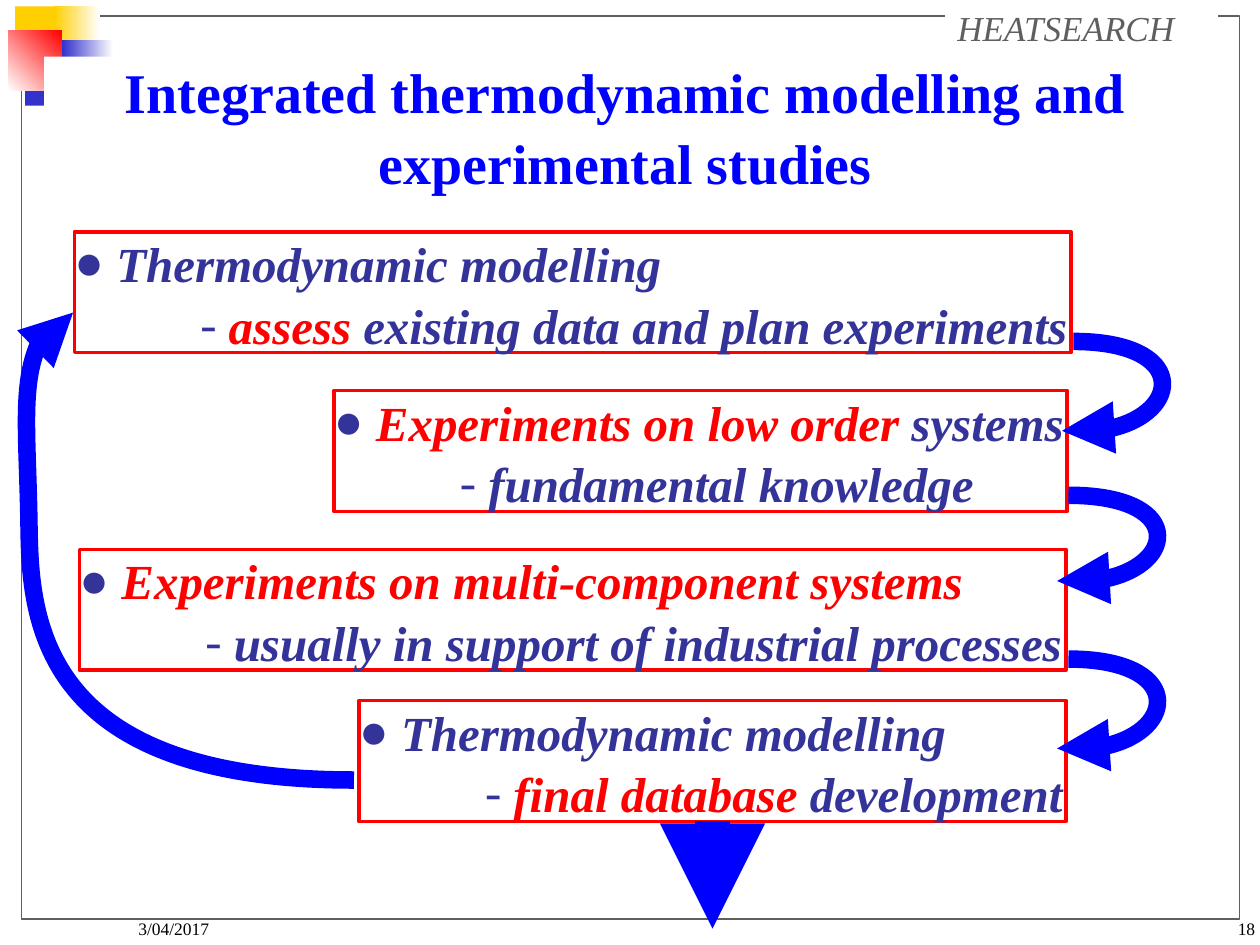
from lxml.etree import SubElement
from pptx import Presentation
from pptx.dml.color import RGBColor
from pptx.enum.shapes import MSO_CONNECTOR, MSO_SHAPE
from pptx.enum.text import MSO_ANCHOR, PP_ALIGN
from pptx.oxml.ns import qn
from pptx.util import Pt

THEME = {
    "font": "Times New Roman", "bullet_font": "Arial",
    "title_size": 32, "step_size": 28, "header_size": 20, "footer_size": 10,
    "blue": "0000FF", "navy": "333399", "red": "FF0000", "grey": "5F5F5F",
    "yellow": "FFCF01", "violet": "3333CC", "white": "FFFFFF", "black": "000000",
}

# Content: lengths in points, places as left, top, width, height
TITLE = "Integrated thermodynamic modelling and experimental studies"
TITLE_PLACE = (25.2, 32.4, 664.6, 77.8)
HEADER = "HEATSEARCH"
HEADER_PLACE = (540, 0, 156, 31)
FRAME = (12.2, 9.2, 696.2, 516)

# Corner tiles: place, colours (two make a gradient), angle
TILES = [
    ((8.6, 3.6, 34.6, 37.4), ["yellow"], 0),
    ((31, 3.6, 25.9, 37.4), ["yellow", "white"], 0),
    ((14.4, 23, 33.1, 37.4), ["violet"], 0),
    ((36, 23, 28.8, 37.4), ["violet", "white"], 0),
    ((5, 17.3, 30.2, 34.6), ["white", "red"], 45),
]

# Steps: left, top, width, then spans of the heading and of the detail
STEP_HEIGHT = 69.1
STEPS = [
    (42.5, 132.5, 569.5, [("Thermodynamic modelling", "navy")],
     [("assess", "red"), (" existing data and plan experiments", "navy")]),
    (190.8, 223.2, 419, [("Experiments on low order", "red"), (" systems", "navy")],
     [("fundamental knowledge", "navy")]),
    (45.4, 313.9, 563.8, [("Experiments on multi-component systems", "red")],
     [("usually in support of industrial processes", "navy")]),
    (205.2, 400.3, 403.9, [("Thermodynamic modelling", "navy")],
     [("final database", "red"), (" development", "navy")]),
]

# Forward loops: left, top, drop to the arrowhead
LOOPS = [(606.9, 195.1, 51.1), (604.1, 283, 49), (604.1, 376.6, 51.1)]
# Return path: start, then control, control, end for each curve
RETURN_PATH = [(202.3, 445.7), (20.2, 445.7), (17.3, 351.4), (16.6, 299.5),
               (15.8, 248.4), (7.9, 186.5), (41.8, 178.6)]
LOOP_WIDTH, OUTPUT_WIDTH, OUTPUT_END = 10, 20, 530.6

# Footers: text, place, alignment, right inset
FOOTERS = [
    ("3/04/2017", (72, 500.4, 149.8, 36), PP_ALIGN.LEFT, 7.2),
    ("18", (567.4, 500.4, 149.8, 36), PP_ALIGN.RIGHT, 0),
]


def colour(name):
    return RGBColor.from_string(THEME[name])


def add_rectangle(page, place, fills=(), angle=0, line=None, width=0.75):
    box = page.shapes.add_shape(MSO_SHAPE.RECTANGLE, *map(Pt, place))
    box.shadow.inherit = False
    if len(fills) == 2:
        box.fill.gradient()
        box.fill.gradient_angle = angle
        for stop, name in zip(box.fill.gradient_stops, fills):
            stop.color.rgb = colour(name)
    elif fills:
        box.fill.solid()
        box.fill.fore_color.rgb = colour(fills[0])
    else:
        box.fill.background()
    if line:
        box.line.color.rgb = colour(line)
        box.line.width = Pt(width)
    else:
        box.line.fill.background()
    return box


def set_frame(frame, insets=(0, 0, 0, 0), anchor=MSO_ANCHOR.MIDDLE, wrap=True):
    (frame.margin_left, frame.margin_top,
     frame.margin_right, frame.margin_bottom) = map(Pt, insets)
    frame.vertical_anchor = anchor
    frame.word_wrap = wrap


def style(para, size, name=None, bold=False, italic=False, align=PP_ALIGN.LEFT):
    para.alignment = align
    font = para.font
    font.name, font.size = THEME["font"], Pt(THEME[size])
    font.bold, font.italic = bold, italic
    if name:
        font.color.rgb = colour(name)


def set_bullet(para, mark, typeface, left, hang):
    props = para._p.get_or_add_pPr()
    props.set("marL", str(Pt(left)))
    props.set("indent", str(Pt(-hang)))
    tint = SubElement(props, qn("a:buClr"))
    SubElement(tint, qn("a:srgbClr")).set("val", THEME["navy"])
    SubElement(props, qn("a:buFont")).set("typeface", typeface)
    SubElement(props, qn("a:buChar")).set("char", mark)


def set_arrow(shape, width):
    shape.line.color.rgb = colour("blue")
    shape.line.width = Pt(width)
    SubElement(shape.line._get_or_add_ln(), qn("a:tailEnd")).set("type", "triangle")


def add_curve(page, points):
    """Draw cubic curves: a start, then three points for each curve."""
    start, *rest = [(Pt(x), Pt(y)) for x, y in points]
    builder = page.shapes.build_freeform(*start)
    builder.add_line_segments(rest, close=False)
    curve = builder.convert_to_shape()
    curve.shadow.inherit = False
    curve.fill.background()
    set_arrow(curve, LOOP_WIDTH)
    outline = next(curve._element.iter(qn("a:path")))
    segments = outline.findall(qn("a:lnTo"))
    for first in range(0, len(segments), 3):
        cubic = SubElement(outline, qn("a:cubicBezTo"))
        for segment in segments[first:first + 3]:
            cubic.append(segment[0])
            outline.remove(segment)


def add_step(page, left, top, width, heading, detail):
    box = add_rectangle(page, (left, top, width, STEP_HEIGHT), line="red", width=2)
    frame = box.text_frame
    set_frame(frame, wrap=False)
    rows = [(heading, "●", THEME["bullet_font"], 24, 24),
            (detail, "-", THEME["font"], 88.2, 16.2)]
    for number, (spans, *bullet) in enumerate(rows):
        para = frame.add_paragraph() if number else frame.paragraphs[0]
        para.line_spacing = 1.05
        set_bullet(para, *bullet)
        style(para, "step_size", bold=True, italic=True)
        for text, name in spans:
            span = para.add_run()
            span.text = text
            span.font.color.rgb = colour(name)
    return box


def main():
    deck = Presentation()
    deck.slide_width, deck.slide_height = Pt(720), Pt(540)
    page = deck.slides.add_slide(deck.slide_layouts[5])

    # Frame, corner tiles and header
    add_rectangle(page, FRAME, line="grey")
    for place, fills, angle in TILES:
        add_rectangle(page, place, fills, angle)
    header = add_rectangle(page, HEADER_PLACE, ["white"])
    set_frame(header.text_frame, (7.2, 3.6, 7.2, 3.6))
    header.text_frame.text = HEADER
    style(header.text_frame.paragraphs[0], "header_size", "grey", italic=True)

    # Title, brought in front of the corner tiles
    title = page.shapes.title
    page.shapes._spTree.append(title._element)
    title.left, title.top, title.width, title.height = map(Pt, TITLE_PLACE)
    title.fill.solid()
    title.fill.fore_color.rgb = colour("white")
    set_frame(title.text_frame)
    title.text_frame.text = TITLE
    para = title.text_frame.paragraphs[0]
    para.line_spacing = 1.05
    style(para, "title_size", "blue", bold=True, align=PP_ALIGN.CENTER)

    # Date and page number
    for text, place, align, right in FOOTERS:
        footer = page.shapes.add_textbox(*map(Pt, place))
        set_frame(footer.text_frame, (7.2, 3.6, right, 0), MSO_ANCHOR.BOTTOM)
        footer.text_frame.text = text
        style(footer.text_frame.paragraphs[0], "footer_size", "black", align=align)

    # Steps and the curves between them
    boxes = [add_step(page, *step) for step in STEPS]
    for left, top, drop in LOOPS:
        add_curve(page, [(left + 6.5, top), (left + 72, top),
                         (left + 69.8, top + drop + 5.8), (left, top + drop)])
    add_curve(page, RETURN_PATH)

    # Output arrow below the last step
    last = boxes[-1]
    middle = last.left + last.width // 2
    arrow = page.shapes.add_connector(MSO_CONNECTOR.STRAIGHT, middle,
                                      last.top + last.height, middle, Pt(OUTPUT_END))
    arrow.begin_connect(last, 2)
    set_arrow(arrow, OUTPUT_WIDTH)
    SubElement(arrow._element.spPr, qn("a:effectLst"))

    deck.save("out.pptx")


if __name__ == "__main__":
    main()
